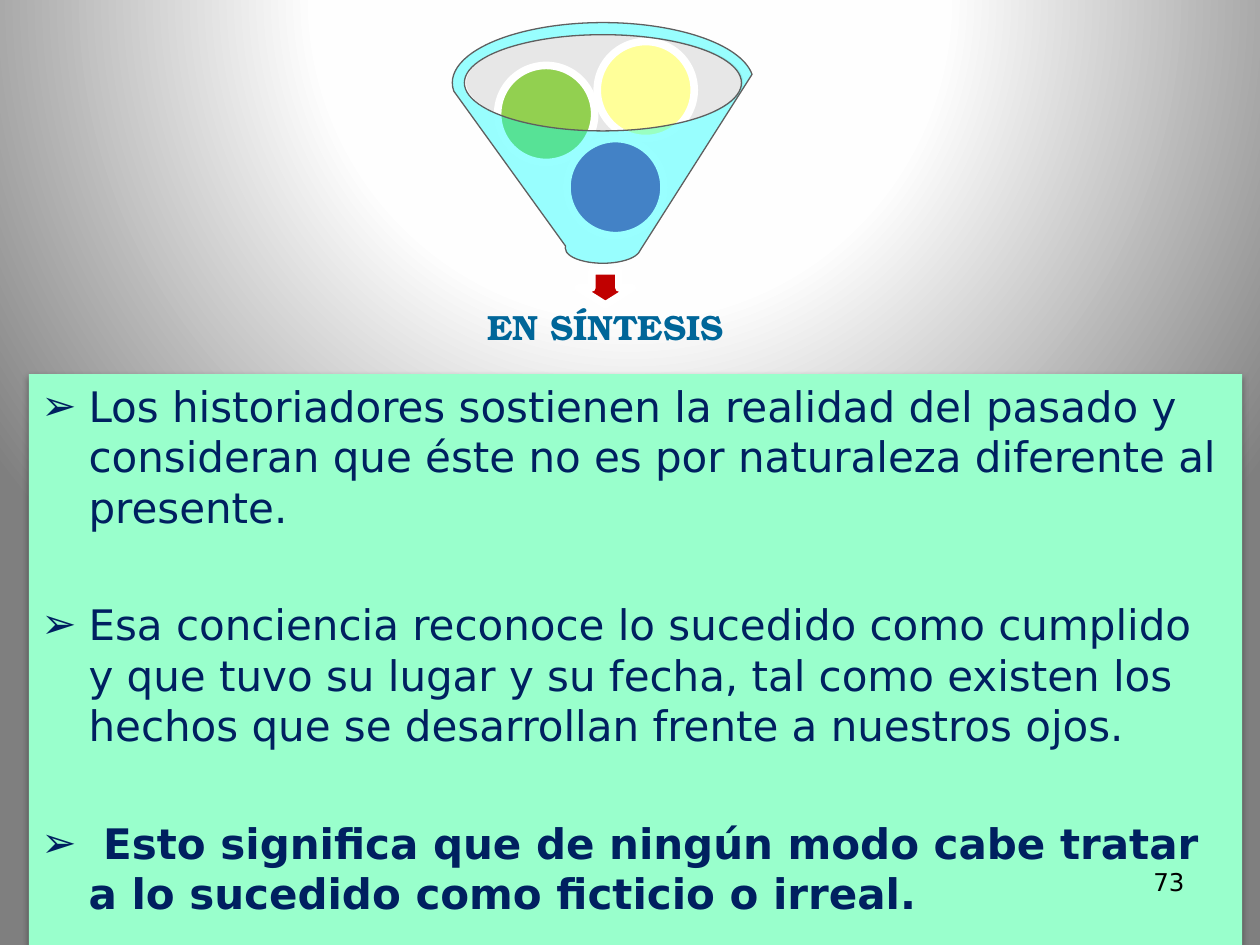
from lxml.etree import SubElement
from pptx import Presentation
from pptx.dml.color import RGBColor
from pptx.enum.shapes import MSO_SHAPE as SHAPE
from pptx.enum.text import MSO_ANCHOR as ANCHOR, PP_ALIGN as ALIGN
from pptx.oxml import parse_xml
from pptx.oxml.ns import nsdecls, qn
from pptx.util import Inches, Pt

NAVY = RGBColor(0x00, 0x20, 0x60)
TEAL = RGBColor(0x00, 0x66, 0x99)
MINT = RGBColor(0x99, 0xFF, 0xCC)
CYAN = RGBColor(0x00, 0xFF, 0xFF)
SILVER = RGBColor(0xC5, 0xC5, 0xC5)
GRAY = RGBColor(0x5F, 0x5F, 0x5F)
RED = RGBColor(0xC0, 0x00, 0x00)
PURPLE = RGBColor(0x70, 0x30, 0xA0)
GREEN = RGBColor(0x92, 0xD0, 0x50)
YELLOW = RGBColor(0xFF, 0xFF, 0x99)
WHITE = RGBColor(0xFF, 0xFF, 0xFF)
BLACK = RGBColor(0x00, 0x00, 0x00)
SANS, SERIF = "DejaVu Sans", "TeX Gyre Bonum"

prs = Presentation()
prs.slide_width, prs.slide_height = Inches(10), Inches(7.5)
W, H = prs.slide_width / 100, prs.slide_height / 100
s = prs.slides.add_slide(prs.slide_layouts[6])

s.background.fill.solid()
bg = s.background.fill._xPr
bg.replace(bg.find(qn("a:solidFill")), parse_xml(
    f'<a:gradFill {nsdecls("a")} rotWithShape="1"><a:gsLst>'
    '<a:gs pos="0"><a:srgbClr val="FFFFFF"/></a:gs>'
    '<a:gs pos="40000"><a:srgbClr val="FEFEFE"/></a:gs>'
    '<a:gs pos="100000"><a:srgbClr val="7F7F7F"/></a:gs></a:gsLst>'
    '<a:path path="circle"><a:fillToRect l="50000" t="-80000" r="50000" b="180000"/>'
    '</a:path></a:gradFill>'))


def add_shape(kind, x, y, w, h, fill, line=None, width=0, alpha=None):
    sp = s.shapes.add_shape(kind, int(x * W), int(y * H), int(w * W), int(h * H))
    sp.shadow.inherit = False
    sp.fill.solid()
    sp.fill.fore_color.rgb = fill
    if alpha:
        color = sp.fill._xPr.find(qn("a:solidFill"))[0]
        SubElement(color, qn("a:alpha"), val=str(alpha * 1000))
    if line is None:
        sp.line.fill.background()
    else:
        sp.line.color.rgb = line
        sp.line.width = Pt(width)
    return sp


def add_run(p, text, font, size, color, bold=False):
    p.text = text
    f = p.runs[0].font
    f.name, f.size, f.bold = font, Pt(size), bold
    f.color.rgb = color


panel = add_shape(SHAPE.RECTANGLE, 2.3, 39.6, 96.3, 60.4, MINT)
effects = panel._element.spPr.find(qn("a:effectLst"))
effects.append(parse_xml(
    f'<a:outerShdw {nsdecls("a")} blurRad="{Pt(3.5)}" dist="{Pt(2.2)}" dir="5400000" '
    'rotWithShape="0"><a:srgbClr val="000000"><a:alpha val="32000"/></a:srgbClr></a:outerShdw>'))
tf = panel.text_frame
tf.word_wrap = True
tf.vertical_anchor = ANCHOR.TOP
points = [
    ("Los historiadores sostienen la realidad del pasado y consideran que éste "
     "no es por naturaleza diferente al presente.", 4.8, False),
    ("Esa conciencia reconoce lo sucedido como cumplido y que tuvo su lugar y su fecha, "
     "tal como existen los hechos que se desarrollan frente a nuestros ojos.", 38.5, False),
    (" Esto significa que de ningún modo cabe tratar a lo sucedido como ficticio "
     "o irreal.", 38.5, True),
]
for i, (text, gap, bold) in enumerate(points):
    p = tf.paragraphs[0] if i == 0 else tf.add_paragraph()
    add_run(p, text, SANS, 24, NAVY, bold)
    p.alignment = ALIGN.LEFT
    p.space_before = Pt(gap)
    pPr = p._p.get_or_add_pPr()
    pPr.set("marL", str(int(3.75 * W)))
    pPr.set("indent", str(int(-3.75 * W)))
    SubElement(SubElement(pPr, qn("a:buClr")), qn("a:srgbClr"), val=str(NAVY))
    SubElement(pPr, qn("a:buFont"), typeface=SANS)
    SubElement(pPr, qn("a:buChar"), char="➢")

add_shape(SHAPE.OVAL, 37, 3.6, 22, 10.27, SILVER, alpha=40)
add_shape(SHAPE.DOWN_ARROW, 45.9, 28.67, 4.3, 3.6, RED, WHITE, 4.33)

title = s.shapes.add_textbox(int(32.8 * W), int(29.47 * H), int(30.5 * W), int(10.8 * H))
tf = title.text_frame
tf.word_wrap = True
tf.vertical_anchor = ANCHOR.MIDDLE
tf.margin_left = tf.margin_right = tf.margin_top = tf.margin_bottom = int(1.6 * W)
p = tf.paragraphs[0]
add_run(p, "EN SÍNTESIS", SERIF, 20, TEAL, True)
p.alignment = ALIGN.CENTER
p.line_spacing = 0.9
p.space_after = Pt(7)

for x, y, fill in [(45, 14.67, PURPLE), (39.5, 6.93, GREEN), (47.4, 4.4, YELLOW)]:
    add_shape(SHAPE.OVAL, x, y, 7.7, 10.27, fill, WHITE, 4.33)
add_shape(SHAPE.FUNNEL, 35.9, 2.4, 23.9, 25.47, CYAN, GRAY, 0.75, 40)

number = s.shapes.add_textbox(int(71.7 * W), int(91.07 * H), int(23.3 * W), int(6.93 * H))
number.text_frame.word_wrap = True
p = number.text_frame.paragraphs[0]
add_run(p, "73", SANS, 14, BLACK)
p.alignment = ALIGN.RIGHT

prs.save("out.pptx")
